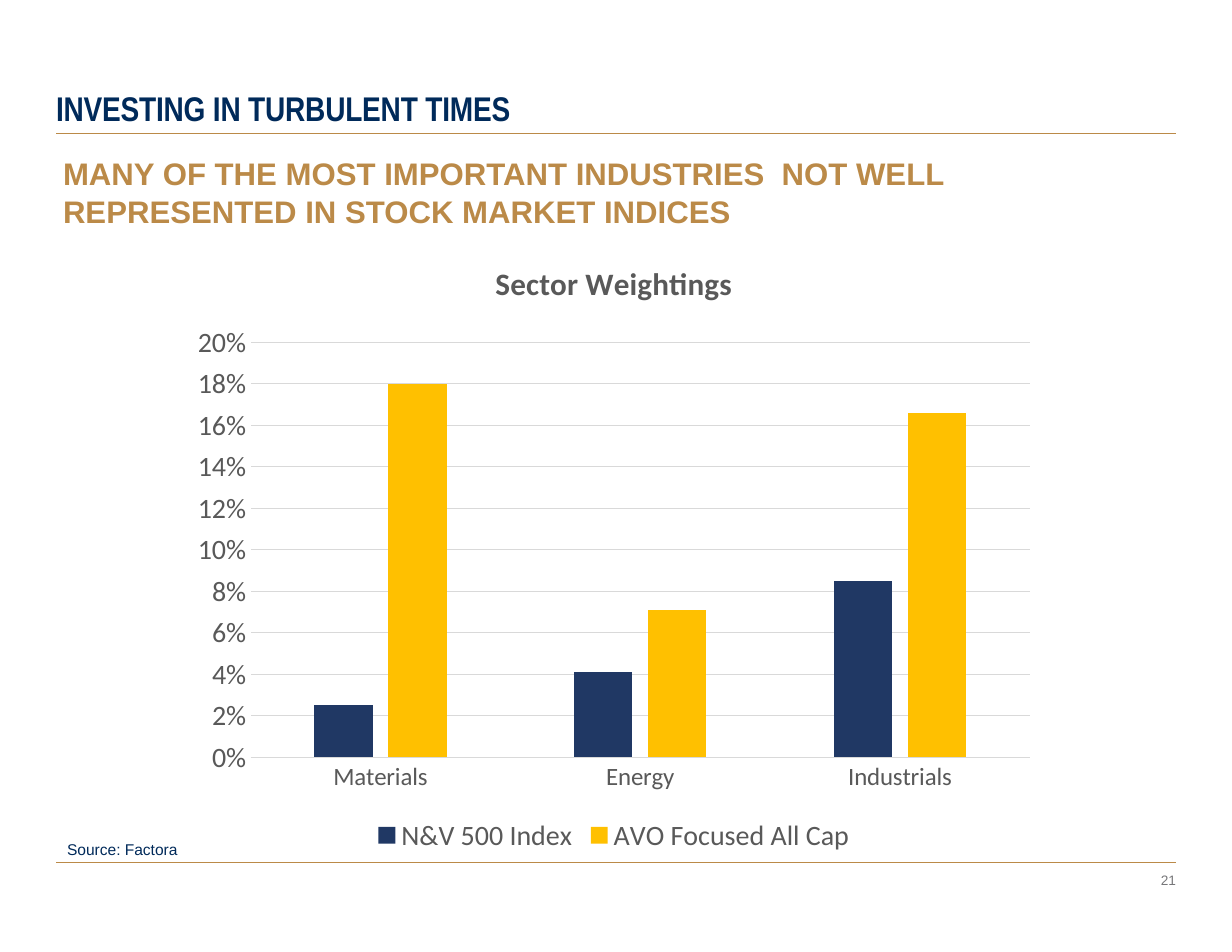
from lxml import etree
from pptx import Presentation
from pptx import util as u
from pptx.chart.data import CategoryChartData
from pptx.dml.color import RGBColor
from pptx.enum import chart as ch, shapes, text
from pptx.oxml.ns import qn

Pt = u.Pt
NAVY, GOLD, GRAY, GRID = "002A5A", "BB8A48", "595959", "D9D9D9"
LEFT, RIGHT = 36, 756


def color(value):
    return RGBColor.from_string(value)


def style(font, size, value, name="Arial", bold=False):
    font.size, font.name, font.bold = Pt(size), name, bold
    font.color.rgb = color(value)


def fill_frame(sp, box, words, size, value, name="Arial", bold=False,
               align=text.PP_ALIGN.LEFT):
    """Place a shape in its box and give it one unpadded paragraph."""
    sp.left, sp.top, sp.width, sp.height = map(Pt, box)
    tf = sp.text_frame
    tf.word_wrap = True
    tf.auto_size = text.MSO_AUTO_SIZE.NONE
    tf.vertical_anchor = text.MSO_ANCHOR.TOP
    tf.margin_left = tf.margin_top = tf.margin_right = tf.margin_bottom = 0
    p = tf.paragraphs[0]
    p.alignment = align
    r = p.add_run()
    r.text = words
    style(r.font, size, value, name, bold)
    return p


def add_text(s, box, *args, **kwargs):
    sp = s.shapes.add_textbox(*map(Pt, box))
    return fill_frame(sp, box, *args, **kwargs)


def add_rule(s, y):
    line = s.shapes.add_connector(shapes.MSO_CONNECTOR.STRAIGHT,
                                  Pt(LEFT), Pt(y), Pt(RIGHT), Pt(y))
    line.line.color.rgb = color(GOLD)
    line.line.width = Pt(0.75)
    etree.SubElement(line._element.spPr, qn("a:effectLst"))


def add_header(s, box):
    x, y, w, h = box
    # Title and the rule under it
    p = fill_frame(s.shapes.title, (x, y, w, 24), "INVESTING IN TURBULENT TIMES",
                   22, NAVY, "Arial Narrow", True)
    p.line_spacing = 0.9
    p.runs[0].font._element.set("spc", "-10")
    add_rule(s, y + 26.7)
    # Headline
    add_text(s, (x + 4.5, y + 40.4, w - 4.5, h - 40.4),
             "MANY OF THE MOST IMPORTANT INDUSTRIES  NOT WELL "
             "REPRESENTED IN STOCK MARKET INDICES", 20, GOLD, bold=True)


def add_weightings_chart(s, box):
    data = CategoryChartData(number_format="0%")
    data.categories = ["Materials", "Energy", "Industrials"]
    data.add_series("N&V 500 Index", (0.025, 0.041, 0.085))
    data.add_series("AVO Focused All Cap", (0.18, 0.071, 0.166))
    chart = s.shapes.add_chart(ch.XL_CHART_TYPE.COLUMN_CLUSTERED,
                               *map(Pt, box), data).chart
    style(chart.font, 10, "000000", "Calibri")

    # Title
    chart.has_title = True
    r = chart.chart_title.text_frame.paragraphs[0].add_run()
    r.text = "Sector Weightings"
    style(r.font, 20, GRAY, "Calibri", True)
    chart.chart_title.include_in_layout = False

    # Columns
    plot = chart.plots[0]
    plot.gap_width, plot.overlap, plot.vary_by_categories = 219, -27, False
    for series, value in zip(plot.series, ("203864", "FFC000")):
        series.format.fill.solid()
        series.format.fill.fore_color.rgb = color(value)
        series.invert_if_negative = False

    # Axes
    cat, val = chart.category_axis, chart.value_axis
    for axis, size in ((cat, 16), (val, 18)):
        axis.major_tick_mark = axis.minor_tick_mark = ch.XL_TICK_MARK.NONE
        style(axis.tick_labels.font, size, GRAY, "Calibri")
    val.minimum_scale, val.maximum_scale, val.major_unit = 0, 0.2, 0.02
    val.tick_labels.number_format = "0%"
    val.tick_labels.number_format_is_linked = False
    val.format.line.fill.background()
    val.has_major_gridlines = True
    for line in (cat.format.line, val.major_gridlines.format.line):
        line.color.rgb = color(GRID)
        line.width = Pt(0.75)

    # Legend
    chart.has_legend = True
    chart.legend.position = ch.XL_LEGEND_POSITION.BOTTOM
    chart.legend.include_in_layout = False
    style(chart.legend.font, 18, GRAY, "Calibri")


def add_footer(s, box):
    x, y, w, h = box
    # Source, rule and page number
    add_text(s, (x + 7.2, y, 117, 12), "Source: Factora", 10, NAVY)
    add_rule(s, y + 14.4)
    add_text(s, (x + w - 112, y + 20.2, 112, 11), "21", 8.8, "77777A",
             align=text.PP_ALIGN.RIGHT)


def main():
    prs = Presentation()
    prs.slide_width, prs.slide_height = Pt(792), Pt(612)
    s = prs.slides.add_slide(prs.slide_layouts[5])
    add_header(s, (LEFT, 59, RIGHT - LEFT, 88.6))
    add_weightings_chart(s, (116, 152.6, 557.3, 398.9))
    add_footer(s, (LEFT, 540, RIGHT - LEFT, 31.2))
    prs.save("out.pptx")


if __name__ == "__main__":
    main()
